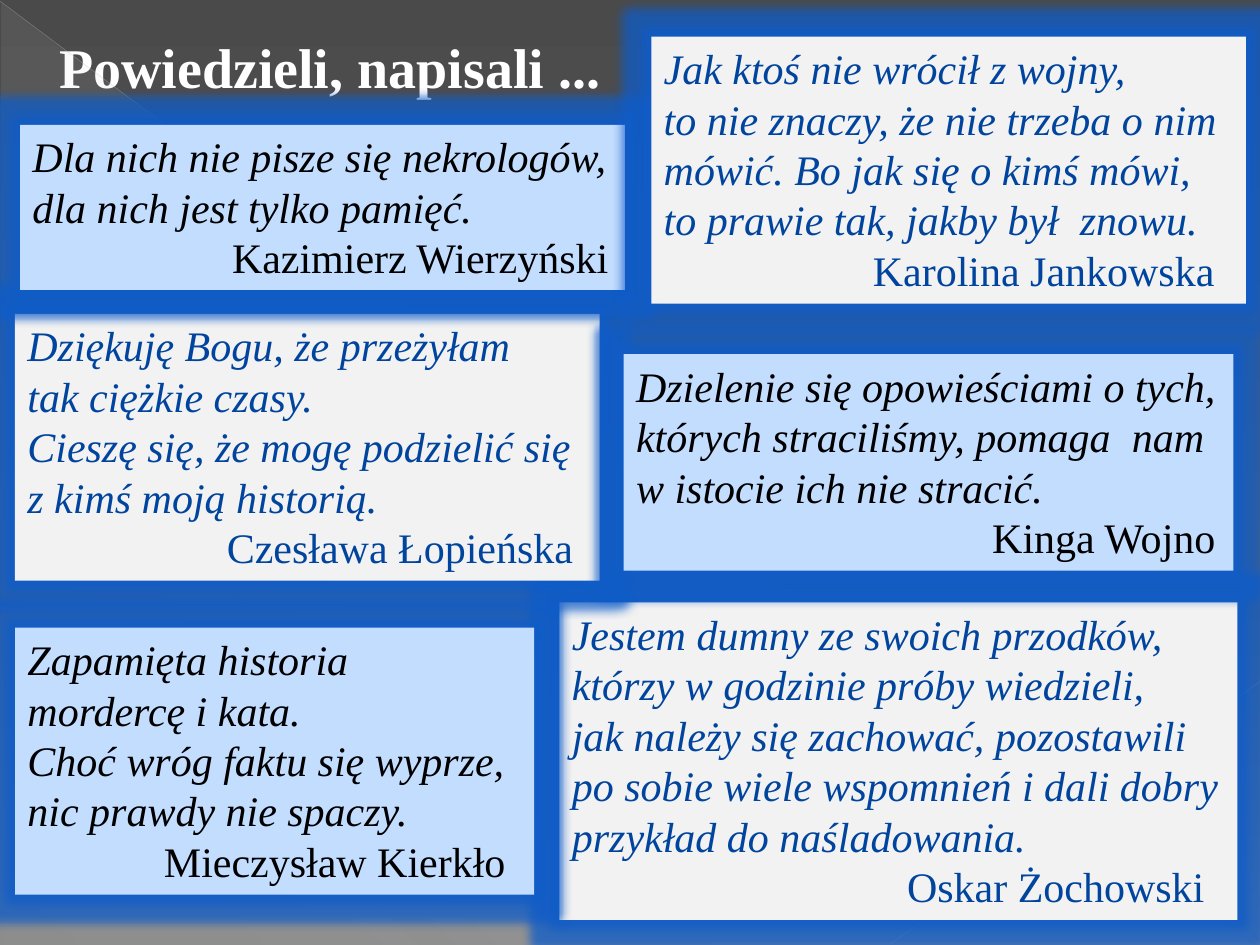
from dataclasses import dataclass

from lxml import etree
from pptx import Presentation
from pptx import util as u
from pptx.dml.color import RGBColor
from pptx.enum import shapes, text
from pptx.oxml.ns import qn


@dataclass(frozen=True)
class Theme:
    font: str = "Times New Roman"
    title_size: float = 32
    quote_size: float = 24
    leading: float = 1.2
    white: str = "FFFFFF"
    black: str = "000000"
    navy: str = "00449E"
    pale_grey: str = "F2F2F2"
    pale_blue: str = "C3DDFF"
    glow: str = "0F5CC8"
    glow_radius: float = 11
    glow_opacity: int = 75
    backdrop: tuple = ((0, "4A4A4A", 100), (60, "626262", 100), (100, "8C8C8C", 100))
    sheen: tuple = ((0, "D2D2D2", 10), (70, "D2D2D2", 8), (100, "D2D2D2", 1))


@dataclass(frozen=True)
class Quote:
    left: float
    top: float
    width: float
    height: float
    lines: tuple[str, ...]
    author: str
    author_indent: float
    fill: str
    ink: str


@dataclass(frozen=True)
class Ray:
    start: tuple[float, float]
    end: tuple[float, float]
    color: str
    width: float
    opacity: int


THEME = Theme()
GREY = {"fill": THEME.pale_grey, "ink": THEME.navy}
BLUE = {"fill": THEME.pale_blue, "ink": THEME.black}

QUOTES = (
    Quote(319.7, 344.2, 387.4, 181.4,
          ("Jestem dumny ze swoich przodków,",
           "którzy w godzinie próby wiedzieli,",
           "jak należy się zachować, pozostawili",
           "po sobie wiele wspomnień i dali dobry",
           "przykład do naśladowania."),
          "Oskar Żochowski", 191.5, **GREY),
    Quote(8.6, 179.3, 334.1, 152.6,
          ("Dziękuję Bogu, że przeżyłam",
           "tak ciężkie czasy.",
           "Cieszę się, że mogę podzielić się",
           "z kimś moją historią."),
          "Czesława Łopieńska", 114, **GREY),
    Quote(8.6, 358.6, 296.6, 152.6,
          ("Zapamięta historia",
           "mordercę i kata.",
           "Choć wróg faktu się wyprze,",
           "nic prawdy nie spaczy."),
          "Mieczysław Kierkło", 78, **BLUE),
    Quote(11.5, 71.3, 345.6, 94.3,
          ("Dla nich nie pisze się nekrologów,",
           "dla nich jest tylko pamięć."),
          "Kazimierz Wierzyński", 114, **BLUE),
    Quote(356.4, 202.3, 348.5, 123.8,
          ("Dzielenie się opowieściami o tych,",
           "których straciliśmy, pomaga  nam",
           "w istocie ich nie stracić."),
          "Kinga Wojno", 203.5, **BLUE),
    Quote(372.2, 20.9, 339.8, 152.6,
          ("Jak ktoś nie wrócił z wojny,",
           "to nie znaczy, że nie trzeba o nim",
           "mówić. Bo jak się o kimś mówi,",
           "to prawie tak, jakby był  znowu."),
          "Karolina Jankowska", 119.5, **GREY),
)

RAYS = (
    Ray((0, 0.7), (719.3, 539.3), "BFBFBF", 0.39, 35),
    Ray((720, 389.5), (509, 539.3), "C6C6C6", 0.47, 45),
)


def add_color(parent, color: str, opacity: int) -> None:
    node = etree.SubElement(parent, qn("a:srgbClr"), val=color)
    if opacity < 100:
        etree.SubElement(node, qn("a:alpha"), val=str(opacity * 1000))


def set_gradient(fill, element, stops: tuple, clockwise: float) -> None:
    fill.gradient()
    fill.gradient_angle = 360 - clockwise
    stop_list = next(element.iter(qn("a:gsLst")))
    for child in list(stop_list):
        stop_list.remove(child)
    for position, color, opacity in stops:
        stop = etree.SubElement(stop_list, qn("a:gs"), pos=str(position * 1000))
        add_color(stop, color, opacity)


def set_frame(frame) -> None:
    frame.word_wrap = True
    frame.auto_size = text.MSO_AUTO_SIZE.NONE
    frame.vertical_anchor = text.MSO_ANCHOR.TOP
    frame.margin_left = frame.margin_right = u.Pt(7.2)
    frame.margin_top = frame.margin_bottom = u.Pt(3.6)


def add_span(para, words: str, size: float, color: str,
             bold: bool = False, italic: bool = False) -> None:
    para.alignment = text.PP_ALIGN.LEFT
    para.line_spacing = u.Pt(size * THEME.leading)
    span = para.add_run()
    span.text = words
    span.font.name = THEME.font
    span.font.size = u.Pt(size)
    span.font.bold = bold
    span.font.italic = italic
    span.font.color.rgb = RGBColor.from_string(color)


def add_ray(page, ray: Ray) -> None:
    line = page.shapes.add_connector(
        shapes.MSO_CONNECTOR.STRAIGHT, *(u.Pt(v) for v in ray.start + ray.end))
    line.line.width = u.Pt(ray.width)
    line.line.color.rgb = RGBColor.from_string(ray.color)
    color = next(line._element.spPr.iter(qn("a:srgbClr")))
    etree.SubElement(color, qn("a:alpha"), val=str(ray.opacity * 1000))
    etree.SubElement(line._element.spPr, qn("a:effectLst"))


def add_backdrop(page) -> None:
    set_gradient(page.background.fill, page._element, THEME.backdrop, 90)
    sheen = page.shapes.add_shape(
        shapes.MSO_SHAPE.RIGHT_TRIANGLE, u.Pt(0.7), u.Pt(1.4), u.Pt(718.6), u.Pt(538.6))
    sheen.shadow.inherit = False
    sheen.line.fill.background()
    set_gradient(sheen.fill, sheen._element, THEME.sheen, 133)
    for ray in RAYS:
        add_ray(page, ray)


def add_quote(page, quote: Quote) -> None:
    box = page.shapes.add_shape(
        shapes.MSO_SHAPE.RECTANGLE, u.Pt(quote.left), u.Pt(quote.top),
        u.Pt(quote.width), u.Pt(quote.height))
    box.shadow.inherit = False
    box.fill.solid()
    box.fill.fore_color.rgb = RGBColor.from_string(quote.fill)
    box.line.fill.background()
    effects = box._element.spPr.find(qn("a:effectLst"))
    glow = etree.SubElement(effects, qn("a:glow"), rad=str(u.Pt(THEME.glow_radius)))
    add_color(glow, THEME.glow, THEME.glow_opacity)
    frame = box.text_frame
    set_frame(frame)
    para = frame.paragraphs[0]
    for words in quote.lines:
        add_span(para, words, THEME.quote_size, quote.ink, italic=True)
        para = frame.add_paragraph()
    add_span(para, quote.author, THEME.quote_size, quote.ink)
    para._p.get_or_add_pPr().set("marL", str(u.Pt(quote.author_indent)))


def add_title(page, words: str) -> None:
    box = page.shapes.title
    box.left, box.top = u.Pt(26.6), u.Pt(15.1)
    box.width, box.height = u.Pt(326.9), u.Pt(46.1)
    set_frame(box.text_frame)
    add_span(box.text_frame.paragraphs[0], words, THEME.title_size, THEME.white, bold=True)


def main() -> None:
    deck = Presentation()
    deck.slide_width, deck.slide_height = u.Pt(720), u.Pt(540)
    page = deck.slides.add_slide(deck.slide_layouts[5])
    add_backdrop(page)
    for quote in QUOTES:
        add_quote(page, quote)
    add_title(page, "Powiedzieli, napisali ...")
    deck.save("out.pptx")


if __name__ == "__main__":
    main()
